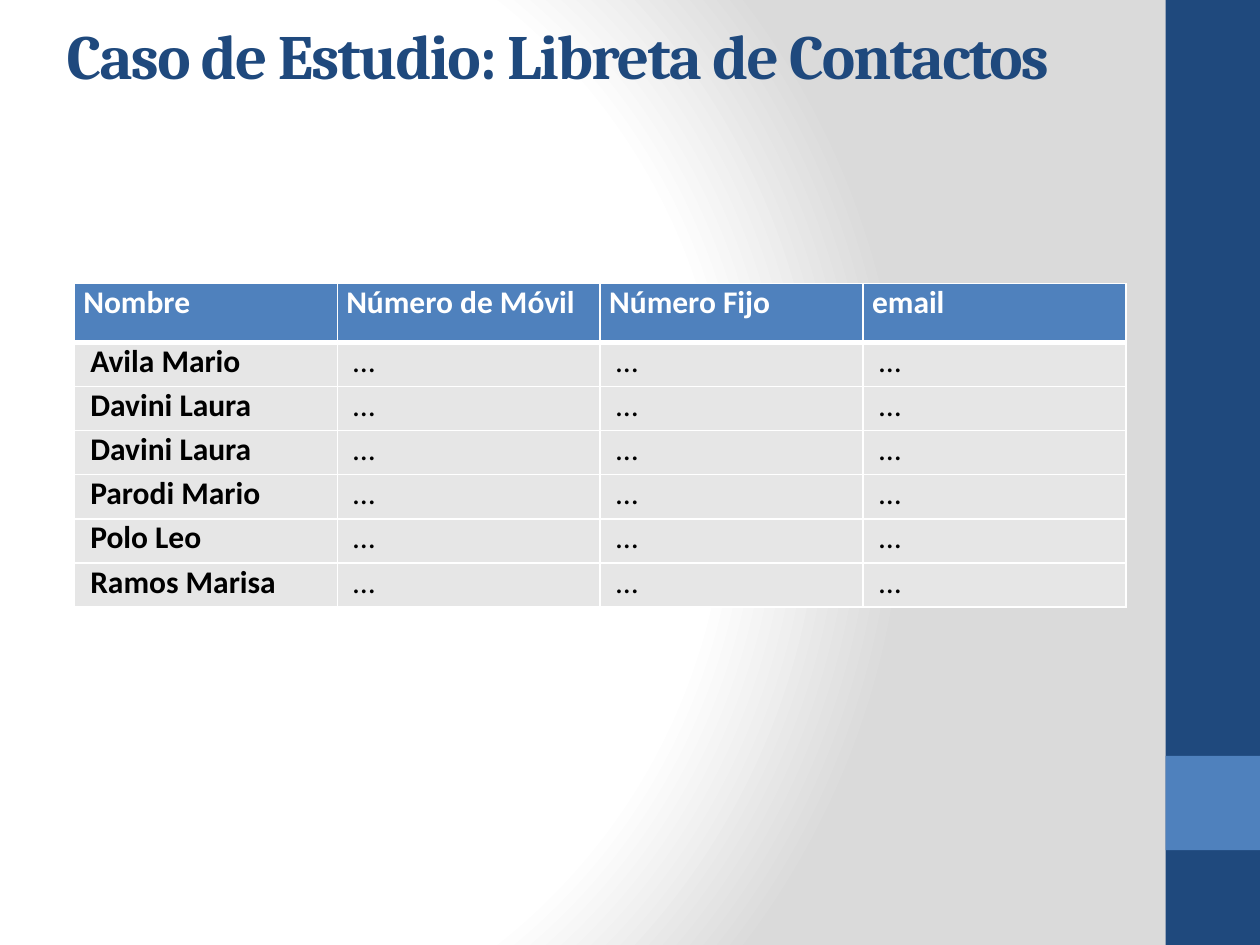
from typing import NamedTuple

from pptx import Presentation
from pptx import util as u
from pptx.dml.color import RGBColor
from pptx.enum import shapes, text
from pptx.oxml import parse_xml
from pptx.oxml.ns import nsdecls

NAVY = RGBColor(0x1F, 0x49, 0x7D)
BLUE = RGBColor(0x4F, 0x81, 0xBD)
LIGHT = RGBColor(0xE6, 0xE6, 0xE6)
GREY = RGBColor(0xDA, 0xDA, 0xDA)
WHITE = RGBColor(0xFF, 0xFF, 0xFF)
BLACK = RGBColor(0, 0, 0)

HEADINGS = ["Nombre", "Número de Móvil", "Número Fijo", "email"]
CONTACTS = ["Avila Mario", "Davini Laura", "Davini Laura",
            "Parodi Mario", "Polo Leo", "Ramos Marisa"]
COL_WIDTH, HEAD_HEIGHT, ROW_HEIGHT = u.Cm(5.3), u.Cm(1.18), u.Cm(0.89)
SIDE_LEFT, SIDE_WIDTH = u.Cm(23.5), u.Cm(1.9)


class Bar(NamedTuple):
    top: u.Length
    height: u.Length
    color: RGBColor


class CellStyle(NamedTuple):
    fill: RGBColor
    color: RGBColor
    bold: bool
    indent: u.Length
    bottom_pt: int


HEAD = CellStyle(BLUE, WHITE, True, u.Cm(0.18), 3)
NAME = CellStyle(LIGHT, BLACK, True, u.Cm(0.32), 1)
VALUE = NAME._replace(bold=False)


def set_format(target, values: dict) -> None:
    for name, value in values.items():
        setattr(target, name, value)


def set_background(s) -> None:
    stops = "".join(
        f'<a:gs pos="{pos * 1000}"><a:srgbClr val="{color}"/></a:gs>'
        for pos, color in [(0, WHITE), (75, WHITE), (100, GREY)])
    bg = parse_xml(
        f'<p:bg {nsdecls("p", "a")}><p:bgPr><a:gradFill><a:gsLst>{stops}</a:gsLst>'
        '<a:path path="circle"><a:fillToRect l="20000" t="50000" r="100000" b="50000"/>'
        '</a:path></a:gradFill><a:effectLst/></p:bgPr></p:bg>')
    s.element.cSld.insert(0, bg)


def draw_bar(s, bar: Bar) -> None:
    sp = s.shapes.add_shape(shapes.MSO_SHAPE.RECTANGLE, SIDE_LEFT, bar.top,
                            SIDE_WIDTH, bar.height)
    sp.shadow.inherit = False
    sp.fill.solid()
    sp.fill.fore_color.rgb = bar.color
    sp.line.fill.background()


def write_title(s, words: str) -> None:
    sp = s.shapes.title
    set_format(sp, dict(left=u.Cm(1.09), top=u.Cm(0.13),
                        width=u.Cm(20.96), height=u.Cm(1.93)))
    tf = sp.text_frame
    set_format(tf, dict(word_wrap=True, auto_size=text.MSO_AUTO_SIZE.NONE,
                        vertical_anchor=text.MSO_ANCHOR.MIDDLE))
    p = tf.paragraphs[0]
    p.alignment = text.PP_ALIGN.LEFT
    r = p.add_run()
    r.text = words
    set_format(r.font, dict(name="Cambria", size=u.Pt(36), bold=True))
    r.font.color.rgb = NAVY
    r.font._element.set("spc", "-100")


def set_borders(cell, bottom_pt: int, top_pt: int) -> None:
    widths = {"lnL": 1, "lnR": 1, "lnT": top_pt, "lnB": bottom_pt}
    for i, (tag, width) in enumerate(widths.items()):
        line = parse_xml(
            f'<a:{tag} {nsdecls("a")} w="{u.Pt(width)}"><a:solidFill>'
            f'<a:srgbClr val="{WHITE}"/></a:solidFill></a:{tag}>')
        cell._tc.get_or_add_tcPr().insert(i, line)


def fill_cell(cell, words: str, style: CellStyle, top_pt: int) -> None:
    set_format(cell, dict(margin_left=style.indent, margin_right=u.Cm(0.18),
                          margin_top=0, margin_bottom=0))
    cell.fill.solid()
    cell.fill.fore_color.rgb = style.fill
    set_borders(cell, style.bottom_pt, top_pt)
    p = cell.text_frame.paragraphs[0]
    p.alignment = text.PP_ALIGN.JUSTIFY
    r = p.add_run()
    r.text = words
    set_format(r.font, dict(name="Calibri", size=u.Pt(18), bold=style.bold))
    r.font.color.rgb = style.color


def draw_contacts(s) -> None:
    rows = [HEADINGS] + [[name] + ["…"] * 3 for name in CONTACTS]
    table = s.shapes.add_table(
        len(rows), len(HEADINGS), u.Cm(1.5), u.Cm(5.72), COL_WIDTH * len(HEADINGS),
        HEAD_HEIGHT + ROW_HEIGHT * len(CONTACTS)).table
    for column in table.columns:
        column.width = COL_WIDTH
    for i, row in enumerate(rows):
        table.rows[i].height = ROW_HEIGHT if i else HEAD_HEIGHT
        for j, words in enumerate(row):
            style = HEAD if i == 0 else NAME if j == 0 else VALUE
            fill_cell(table.cell(i, j), words, style, top_pt=3 if i == 1 else 1)


def main() -> None:
    prs = Presentation()
    set_format(prs, dict(slide_width=u.Cm(25.4), slide_height=u.Cm(19.05)))
    s = prs.slides.add_slide(prs.slide_layouts[5])
    set_background(s)
    for bar in [Bar(u.Cm(0), prs.slide_height, NAVY),
                Bar(u.Cm(15.24), SIDE_WIDTH, BLUE)]:
        draw_bar(s, bar)
    write_title(s, "Caso de Estudio: Libreta de Contactos")
    draw_contacts(s)
    prs.save("out.pptx")


if __name__ == "__main__":
    main()
